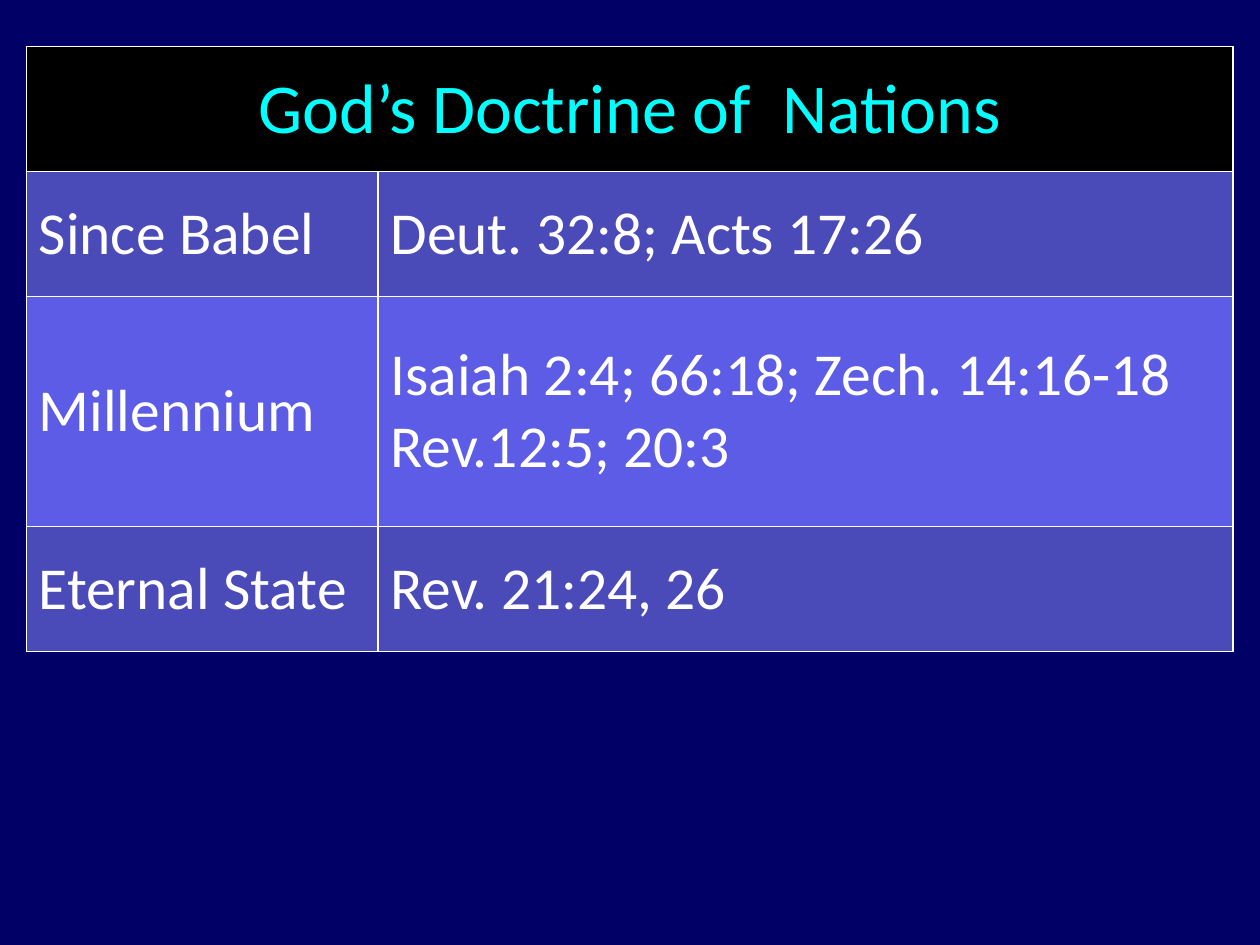
from pptx import Presentation
from pptx.dml.color import RGBColor
from pptx.enum.text import MSO_ANCHOR, PP_ALIGN
from pptx.oxml import parse_xml
from pptx.oxml.ns import nsdecls
from pptx.util import Cm, Pt

HEADING = "God’s Doctrine of  Nations"
PERIODS = [
    ("Since Babel", "Deut. 32:8; Acts 17:26"),
    ("Millennium", "Isaiah 2:4; 66:18; Zech. 14:16-18 Rev.12:5; 20:3"),
    ("Eternal State", "Rev. 21:24, 26"),
]
BAND_FILLS = ["4A4AB9", "5C5CE7"]
COL_WIDTHS = [7.09, 17.24]
ROW_HEIGHTS = [2.52, 2.52, 4.63, 2.52]


def rgb(value):
    return RGBColor.from_string(value)


def add_borders(cell, color="FFFFFF", width=Pt(1)):
    # Borders must come before the fill in the cell properties
    tc_pr = cell._tc.get_or_add_tcPr()
    for i, side in enumerate(("lnL", "lnR", "lnT", "lnB")):
        tc_pr.insert(i, parse_xml(
            f'<a:{side} {nsdecls("a")} w="{width}"><a:solidFill>'
            f'<a:srgbClr val="{color}"/></a:solidFill></a:{side}>'))


def style_cell(cell, fill):
    cell.fill.solid()
    cell.fill.fore_color.rgb = rgb(fill)
    cell.vertical_anchor = MSO_ANCHOR.MIDDLE
    add_borders(cell)


def write_cell(cell, text, size=34, color="FFFFFF", align=PP_ALIGN.LEFT):
    p = cell.text_frame.paragraphs[0]
    p.text = text
    p.alignment = align
    p.font.name = "Calibri"
    p.font.size = Pt(size)
    p.font.color.rgb = rgb(color)


def add_nations_table(s):
    frame = s.shapes.add_table(len(ROW_HEIGHTS), len(COL_WIDTHS),
                               Cm(0.53), Cm(0.94),
                               Cm(sum(COL_WIDTHS)), Cm(sum(ROW_HEIGHTS)))
    table = frame.table
    for column, width in zip(table.columns, COL_WIDTHS):
        column.width = Cm(width)
    for row, height in zip(table.rows, ROW_HEIGHTS):
        row.height = Cm(height)

    # Heading across both columns
    for cell in table.rows[0].cells:
        style_cell(cell, "000000")
    heading = table.cell(0, 0)
    heading.merge(table.cell(0, 1))
    write_cell(heading, HEADING, 40, "00FFFF", PP_ALIGN.CENTER)

    # Periods and their references, in alternating bands
    for i, texts in enumerate(PERIODS):
        for j, text in enumerate(texts):
            cell = table.cell(i + 1, j)
            style_cell(cell, BAND_FILLS[i % 2])
            write_cell(cell, text)


def main():
    prs = Presentation()
    prs.slide_width, prs.slide_height = Cm(25.4), Cm(19.05)
    s = prs.slides.add_slide(prs.slide_layouts[6])
    s.background.fill.solid()
    s.background.fill.fore_color.rgb = rgb("000066")
    add_nations_table(s)
    prs.save("out.pptx")


if __name__ == "__main__":
    main()
